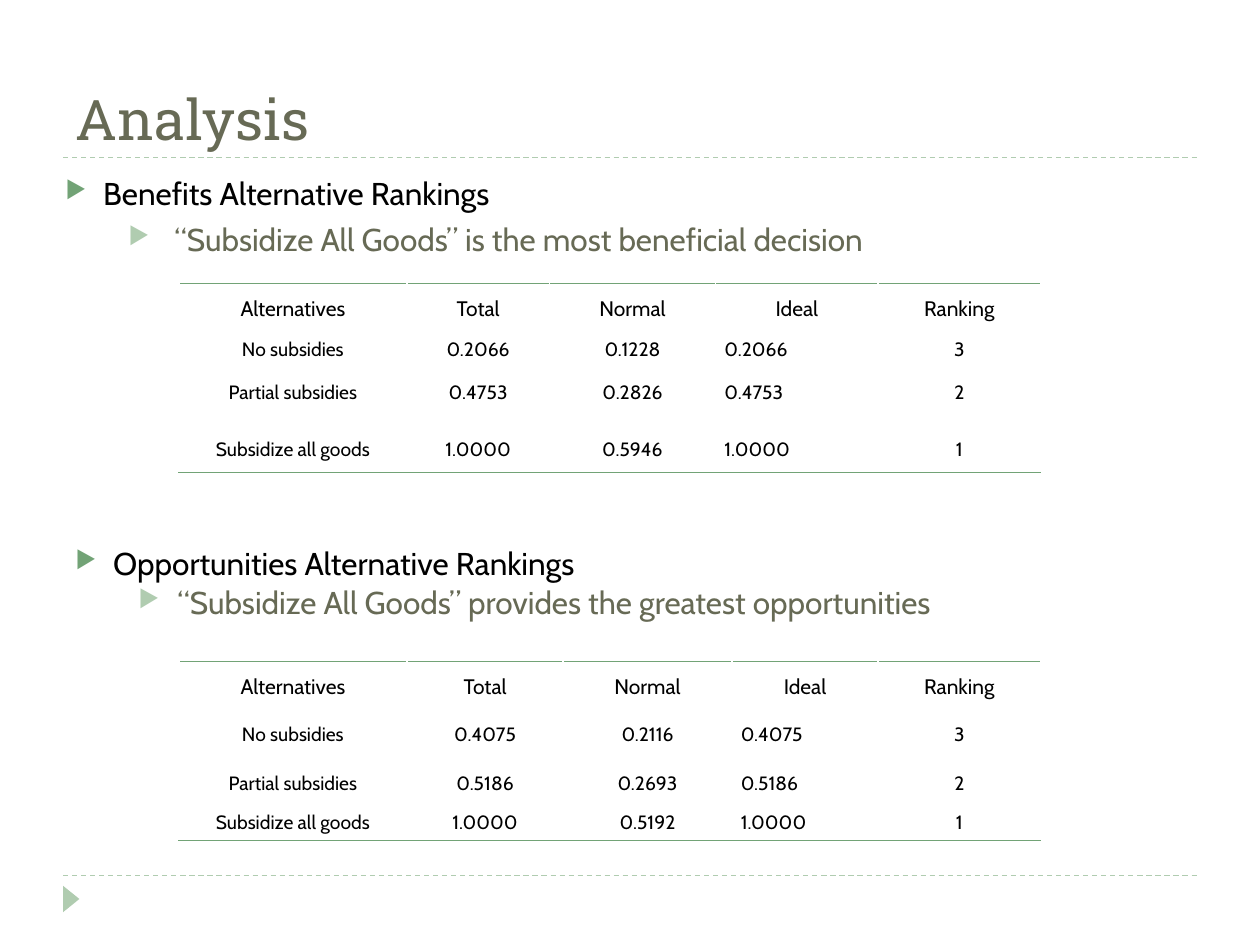
import pptx
import pptx.dml.color
import pptx.enum.dml
import pptx.enum.shapes
import pptx.enum.text
import pptx.oxml
import pptx.oxml.ns
import pptx.util
import lxml.etree

Inches = pptx.util.Inches
Pt = pptx.util.Pt
ALIGN = pptx.enum.text.PP_ALIGN
COLORS = {"title": "676A55", "text": "000000", "accent": "72A376", "soft": "B0CCB0"}
LEVELS = [
    {"margin": 0.3, "hang": 0.3, "before": 6, "bullet": "accent", "text": "text"},
    {"margin": 0.81, "hang": 0.31, "before": 5, "bullet": "soft", "text": "title"},
]
HEADER = ["Alternatives", "Total", "Normal", "Ideal", "Ranking"]
IDEAL_COLUMN = HEADER.index("Ideal")


def rgb(name):
    return pptx.dml.color.RGBColor.from_string(COLORS[name])


def add_child(parent, tag, **attributes):
    return lxml.etree.SubElement(parent, pptx.oxml.ns.qn(tag), **attributes)


class SlideBuilder:
    """Holds the fonts and the slide that is being filled."""

    heading_font = "Roboto Slab"
    body_font = "Cabin"

    def __init__(self, slide):
        self.slide = slide

    def style(self, para, size, color, font=body_font):
        for run in para.runs:
            run.font.size = Pt(size)
            run.font.name = font
            run.font.color.rgb = rgb(color)

    def text_box(self, left, top, width, height):
        box = self.slide.shapes.add_textbox(
            Inches(left), Inches(top), Inches(width), Inches(height))
        box.text_frame.word_wrap = True
        return box.text_frame

    def title(self, text):
        frame = self.text_box(0.5, 0.25, 9, 1)
        frame.vertical_anchor = pptx.enum.text.MSO_ANCHOR.BOTTOM
        frame.text = text
        self.style(frame.paragraphs[0], 32, "title", self.heading_font)

    def rule(self, y):
        line = self.slide.shapes.add_connector(
            pptx.enum.shapes.MSO_CONNECTOR.STRAIGHT,
            Inches(0.5), Inches(y), Inches(9.5), Inches(y))
        line.line.color.rgb = rgb("soft")
        line.line.width = Pt(0.75)
        line.line.dash_style = pptx.enum.dml.MSO_LINE.DASH
        add_child(line._element.spPr, "a:effectLst")

    def corner_arrow(self):
        arrow = self.slide.shapes.add_shape(
            pptx.enum.shapes.MSO_SHAPE.ISOSCELES_TRIANGLE,
            Inches(0.46), Inches(7.07), Inches(0.21), Inches(0.13))
        arrow.rotation = 90
        arrow.shadow.inherit = False
        arrow.fill.solid()
        arrow.fill.fore_color.rgb = rgb("soft")
        arrow.line.fill.background()

    def bullets(self, left, top, width, texts, spacing=1.0):
        """Write one paragraph per text, each a level deeper than the last."""
        frame = self.text_box(left, top, width, 5.4)
        for index, (text, level) in enumerate(zip(texts, LEVELS)):
            para = frame.add_paragraph() if index else frame.paragraphs[0]
            para.text = text
            para.level = index
            para.line_spacing = spacing
            para.space_before = Pt(level["before"])
            self.style(para, 18, level["text"])
            properties = para._p.get_or_add_pPr()
            properties.set("marL", str(Inches(level["margin"])))
            properties.set("indent", str(-Inches(level["hang"])))
            color = add_child(properties, "a:buClr")
            add_child(color, "a:srgbClr", val=COLORS[level["bullet"]])
            add_child(properties, "a:buSzPct", val="76000")
            add_child(properties, "a:buChar", char="▶")

    def cell_border(self, cell, tag):
        border = pptx.oxml.parse_xml(
            f'<a:{tag} {pptx.oxml.ns.nsdecls("a")} w="{Pt(1)}"><a:solidFill>'
            f'<a:srgbClr val="{COLORS["accent"]}"/></a:solidFill></a:{tag}>')
        cell._tc.get_or_add_tcPr().insert(0, border)

    def ranking_table(self, top, widths, heights, records):
        rows = [HEADER] + records
        table = self.slide.shapes.add_table(
            len(rows), len(HEADER), Inches(1.42), Inches(top),
            Inches(sum(widths)), Inches(sum(heights))).table
        table.first_row = table.horz_banding = False
        for column, width in zip(table.columns, widths):
            column.width = Inches(width)
        for row, height in zip(table.rows, heights):
            row.height = Inches(height)
        for r, values in enumerate(rows):
            for c, value in enumerate(values):
                cell = table.cell(r, c)
                cell.fill.background()
                cell.margin_left = cell.margin_right = Inches(0.07)
                cell.margin_top = cell.margin_bottom = 0
                cell.text_frame.text = value
                para = cell.text_frame.paragraphs[0]
                para.line_spacing = 1.5
                is_ideal_value = r > 0 and c == IDEAL_COLUMN
                para.alignment = ALIGN.LEFT if is_ideal_value else ALIGN.CENTER
                self.style(para, 11 if r else 12, "text")
                if r == 0:
                    self.cell_border(cell, "lnT")
                elif r == len(rows) - 1:
                    self.cell_border(cell, "lnB")


def main():
    deck = pptx.Presentation()
    deck.slide_width, deck.slide_height = Inches(10), Inches(7.5)
    page = SlideBuilder(deck.slides.add_slide(deck.slide_layouts[6]))

    for y in (6.95, 1.25):
        page.rule(y)
    page.corner_arrow()
    page.title("Analysis")
    page.bullets(0.42, 1.33, 9.17, [
        "Benefits Alternative Rankings",
        " “Subsidize All Goods” is the most beneficial decision"])
    page.bullets(0.5, 4.33, 8.67, [
        "Opportunities Alternative Rankings",
        "“Subsidize All Goods” provides the greatest opportunities"], spacing=0.8)
    page.ranking_table(2.25, [1.81, 1.13, 1.32, 1.29, 1.29], [0.34, 0.34, 0.45, 0.37], [
        ["No subsidies", "0.2066", "0.1228", "0.2066", "3"],
        ["Partial subsidies", "0.4753", "0.2826", "0.4753", "2"],
        ["Subsidize all goods", "1.0000", "0.5946", "1.0000", "1"]])
    page.ranking_table(5.25, [1.81, 1.24, 1.34, 1.16, 1.29], [0.39, 0.39, 0.31, 0.33], [
        ["No subsidies", "0.4075", "0.2116", "0.4075", "3"],
        ["Partial subsidies", "0.5186", "0.2693", "0.5186", "2"],
        ["Subsidize all goods", "1.0000", "0.5192", "1.0000", "1"]])
    deck.save("out.pptx")


if __name__ == "__main__":
    main()
